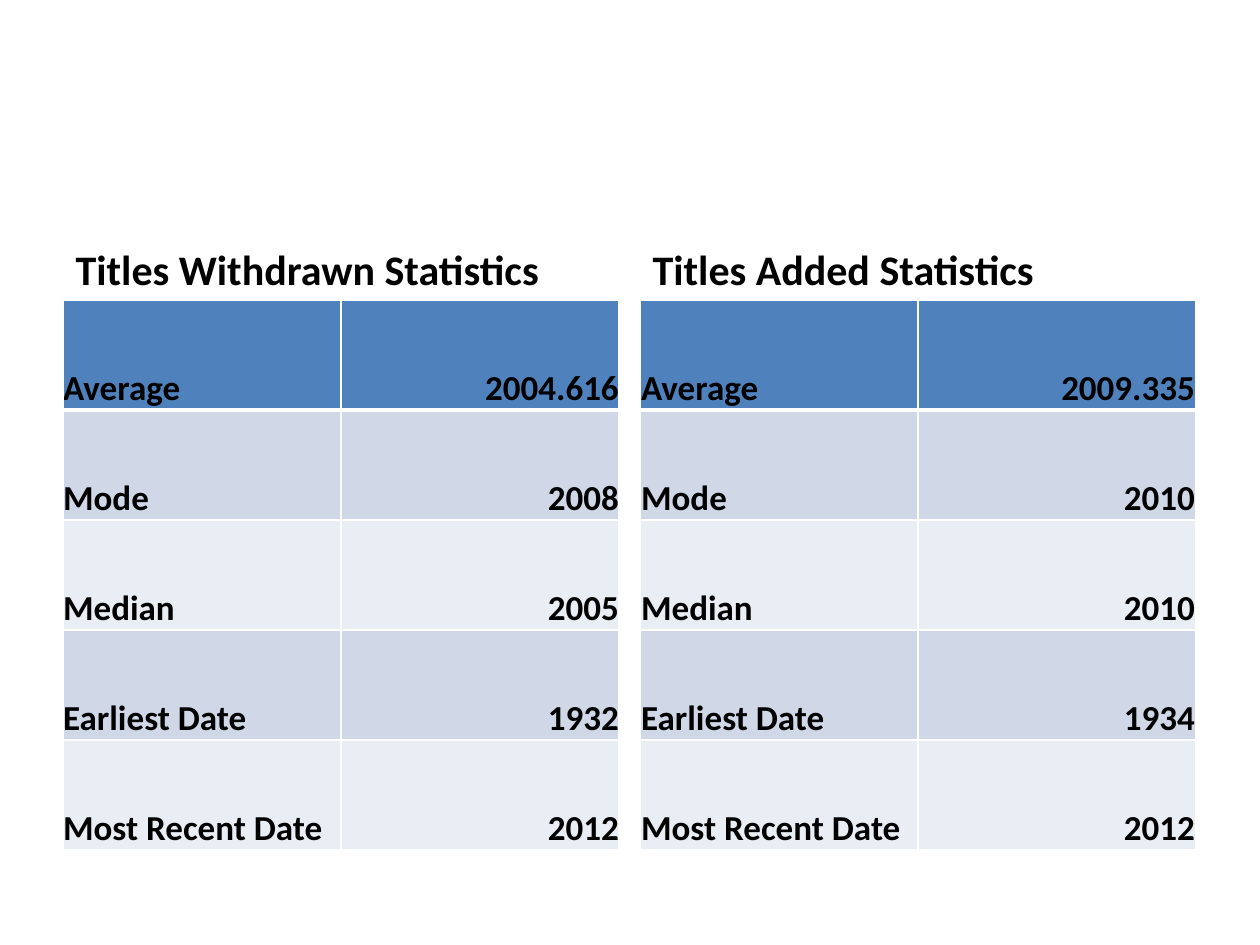
"""Build a slide that compares date statistics of withdrawn and added titles."""
from dataclasses import dataclass

from lxml.etree import SubElement as Sub
from pptx import Presentation
from pptx.dml.color import RGBColor as RGB
from pptx.enum.text import MSO_ANCHOR as Anchor, PP_ALIGN as Align
from pptx.oxml.ns import qn
from pptx.util import Inches, Pt


@dataclass(frozen=True)
class Theme:
    font: str = "Calibri"
    ink: str = "000000"
    rule: str = "FFFFFF"
    top: str = "4F81BD"
    bands: tuple = ("E9EDF4", "D0D8E8")
    head: int = 24
    body: int = 20
    thin: int = 1
    thick: int = 3


def style(par, size):
    for run in par.runs:
        font = run.font
        font.name, font.size, font.bold = look.font, Pt(size), True
        font.color.rgb = RGB.from_string(look.ink)


def edge(cell, row):
    props = cell._tc.get_or_add_tcPr()
    for spot, side in enumerate(("lnL", "lnR", "lnT", "lnB")):
        thick = (row, side) in ((0, "lnB"), (1, "lnT"))
        line = Sub(props, qn(f"a:{side}"), w=str(Pt(look.thick if thick else look.thin)))
        Sub(Sub(line, qn("a:solidFill")), qn("a:srgbClr"), val=look.rule)
        props.insert(spot, line)


look = Theme()
PX = Inches(1) / 126
LEFT, STEP, WIDTH = 63, 577, 556
HEAD_TOP, HEAD_H = 212, 88
ROW_H = 110

labels = ("Average", "Mode", "Median", "Earliest Date", "Most Recent Date")
panels = (
    ("Titles Withdrawn Statistics", 0, ("2004.616", "2008", "2005", "1932", "2012")),
    ("Titles Added Statistics", 1, ("2009.335", "2010", "2010", "1934", "2012")),
)

deck = Presentation()
deck.slide_width, deck.slide_height = Inches(10), Inches(7.5)
slide = deck.slides.add_slide(deck.slide_layouts.get_by_name("Comparison"))
heads = [slide.placeholders[1], slide.placeholders[3]]
for idx in (0, 2, 4):
    spare = slide.placeholders[idx].element
    spare.getparent().remove(spare)

for num, (head, (title, pad, values)) in enumerate(zip(heads, panels)):
    left = int((LEFT + num * STEP) * PX)
    head.left, head.top = left, int(HEAD_TOP * PX)
    head.width, head.height = int(WIDTH * PX), int(HEAD_H * PX)
    head.text_frame.text = title
    head.text_frame.vertical_anchor = Anchor.BOTTOM
    style(head.text_frame.paragraphs[0], look.head)

    table = slide.shapes.add_table(
        len(labels), 2, left, int((HEAD_TOP + HEAD_H) * PX),
        int(WIDTH * PX), int(len(labels) * ROW_H * PX),
    ).table
    for row, pair in enumerate(zip(labels, values)):
        table.rows[row].height = int(ROW_H * PX)
        for col, text in enumerate(pair):
            cell = table.cell(row, col)
            cell.margin_left = cell.margin_right = cell.margin_top = int(pad * PX)
            cell.margin_bottom = 0
            cell.vertical_anchor = Anchor.BOTTOM
            cell.fill.solid()
            shade = look.bands[row % 2] if row else look.top
            cell.fill.fore_color.rgb = RGB.from_string(shade)
            edge(cell, row)
            par = cell.text_frame.paragraphs[0]
            par.text = text
            par.alignment = Align.RIGHT if col else Align.LEFT
            style(par, look.body)

deck.save("out.pptx")
